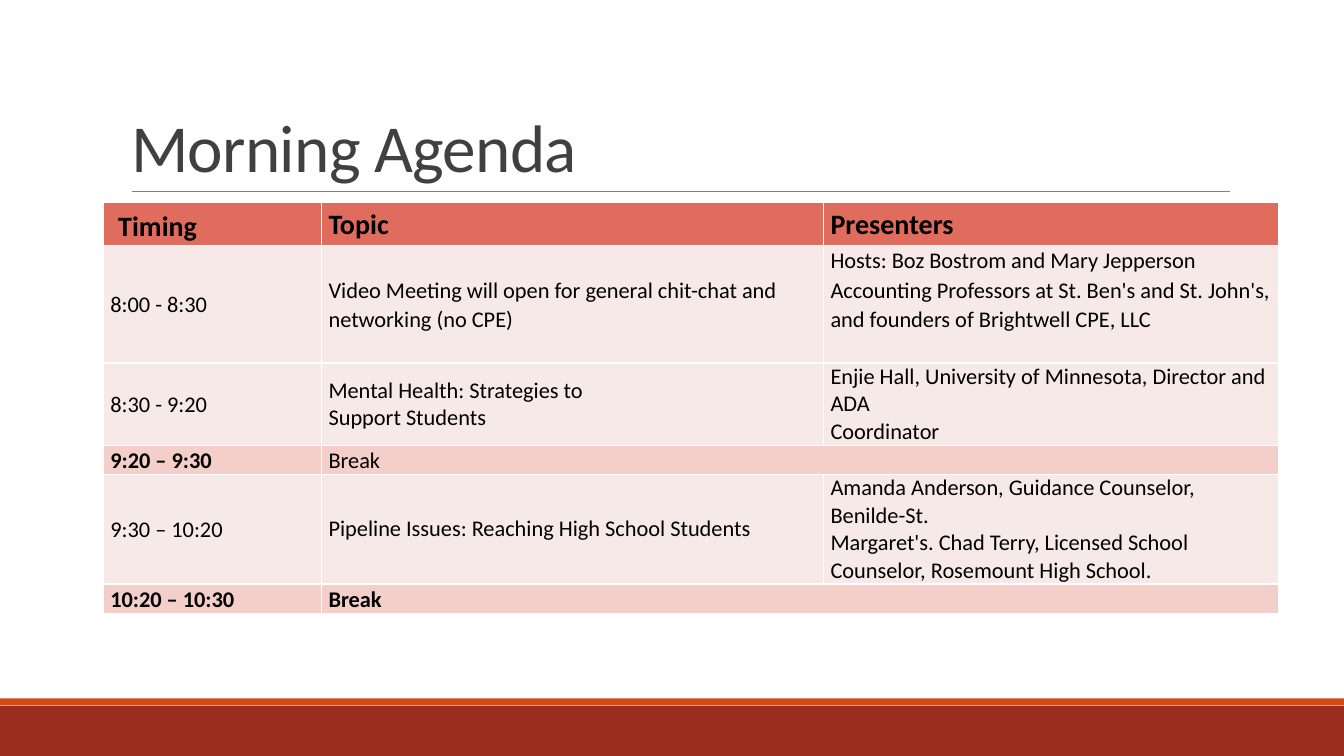
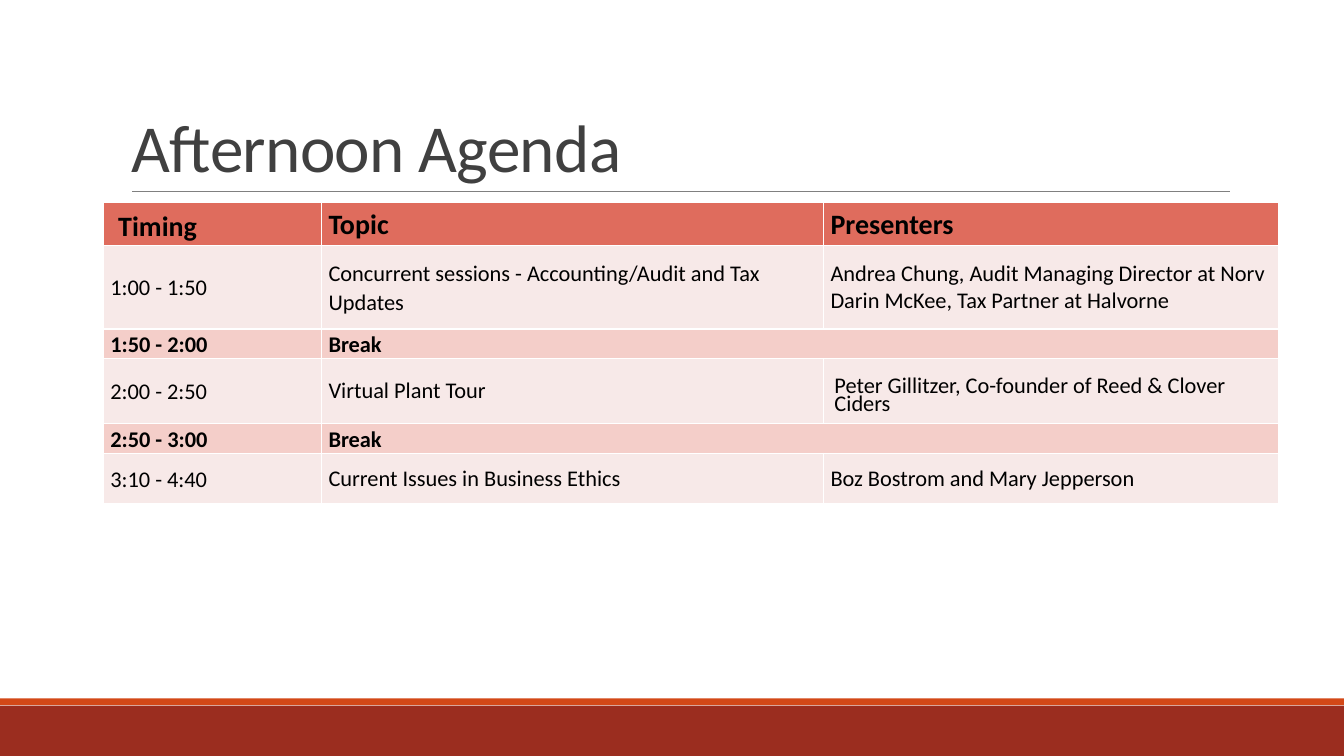
from dataclasses import dataclass

from lxml.etree import SubElement
from pptx import Presentation
from pptx.dml.color import RGBColor
from pptx.enum.shapes import MSO_CONNECTOR as Link, MSO_SHAPE as Shape
from pptx.enum.text import MSO_ANCHOR as Anchor, PP_ALIGN as Align
from pptx.oxml.ns import qn
from pptx.util import Cm, Pt

FONT = "Calibri"
INK, BLACK, WHITE, RULE = "404040", "000000", "FFFFFF", "808080"
BANDS = [(17.78, 1.27, "9B2D1F"), (17.6, 0.17, "D34817")]
HEAD, PLAIN, PAUSE = "DF6C5D", "F7E9E8", "F4CEC9"
WIDE, TALL = 33.87, 19.05
COLS = [5.5, 12.65, 11.47]
LOOSE = 1.07
THIN = 0.74


@dataclass
class Cell:
    text: str
    lead: object = 1.0
    bold: bool = False
    size: int = 16
    left: float = 0.18
    top: float = 0
    base: float = 0


@dataclass
class Row:
    high: float
    cells: list
    fill: str = PLAIN


def slot(high, time, topic, who):
    return Row(high, [Cell(time, LOOSE), topic, who])


def rest(time, bold=True):
    return Row(THIN, [Cell(time, LOOSE, True), Cell("Break", LOOSE, bold)], PAUSE)


def head():
    return Row(1.1, [
        Cell("Timing", LOOSE, True, 20, left=0.38, top=0.1),
        Cell("Topic", LOOSE, True, 20),
        Cell("Presenters", LOOSE, True, 20),
    ], HEAD)


MORNING = [
    slot(2.95, "8:00 - 8:30",
         Cell("Video Meeting will open for general chit-chat and networking (no CPE)", LOOSE),
         Cell("Hosts: Boz Bostrom and Mary Jepperson\n"
              "Accounting Professors at St. Ben's and St. John's, "
              "and founders of Brightwell CPE, LLC", LOOSE, base=0.74)),
    slot(2.07, "8:30 - 9:20",
         Cell("Mental Health: Strategies to\nSupport Students"),
         Cell("Enjie Hall, University of Minnesota, Director and ADA\nCoordinator")),
    rest("9:20 – 9:30", False),
    slot(2.76, "9:30 – 10:20",
         Cell("Pipeline Issues: Reaching High School Students"),
         Cell("Amanda Anderson, Guidance Counselor, Benilde-St.\n"
              "Margaret's. Chad Terry, Licensed School Counselor, Rosemount High School.")),
    rest("10:20 – 10:30"),
]

AFTERNOON = [
    slot(2.1, "1:00 - 1:50",
         Cell("Concurrent sessions - Accounting/Audit and Tax Updates", LOOSE),
         Cell("Andrea Chung, Audit Managing Director at Norv\n"
              "Darin McKee, Tax Partner at Halvorne")),
    rest("1:50 - 2:00"),
    slot(1.65, "2:00 - 2:50",
         Cell("Virtual Plant Tour"),
         Cell("Peter Gillitzer, Co-founder of Reed & Clover Ciders",
              Pt(12.7), left=0.28, top=0.45)),
    rest("2:50 - 3:00"),
    slot(1.27, "3:10 - 4:40",
         Cell("Current Issues in Business Ethics"),
         Cell("Boz Bostrom and Mary Jepperson")),
]


def color(code):
    return RGBColor.from_string(code)


def paint(fill, code):
    fill.solid()
    fill.fore_color.rgb = color(code)


def style(para, size, code, lead, bold=False):
    para.alignment = Align.LEFT
    para.line_spacing = lead
    font = para.font
    font.name, font.size, font.bold = FONT, Pt(size), bold
    font.color.rgb = color(code)


def add_bands(slide):
    for top, high, code in BANDS:
        band = slide.shapes.add_shape(Shape.RECTANGLE, 0, Cm(top), Cm(WIDE), Cm(high))
        band.shadow.inherit = False
        paint(band.fill, code)
        band.line.fill.background()


def add_title(slide, text, left, top, wide, high):
    title = slide.shapes.title
    title.left, title.top = Cm(left), Cm(top)
    title.width, title.height = Cm(wide), Cm(high)
    frame = title.text_frame
    frame.text = text
    frame.vertical_anchor = Anchor.BOTTOM
    para = frame.paragraphs[0]
    style(para, 48, INK, 0.85)
    para.runs[0]._r.get_or_add_rPr().set("spc", "-50")
    base = Cm(top + high)
    rule = slide.shapes.add_connector(
        Link.STRAIGHT, Cm(left + 0.28), base, Cm(left + wide), base)
    rule.line.color.rgb = color(RULE)
    rule.line.width = Pt(0.5)
    SubElement(rule._element.spPr, qn("a:effectLst"))


def edge(cell):
    props = cell._tc.get_or_add_tcPr()
    for side in ("lnL", "lnR", "lnT", "lnB"):
        line = SubElement(props, qn(f"a:{side}"), w=str(Pt(1)))
        fill = SubElement(line, qn("a:solidFill"))
        SubElement(fill, qn("a:srgbClr"), val=WHITE)


def fill_cell(cell, item):
    cell.vertical_anchor = Anchor.MIDDLE
    cell.margin_left, cell.margin_right = Cm(item.left), Cm(0.18)
    cell.margin_top, cell.margin_bottom = Cm(item.top), Cm(item.base)
    cell.text = item.text
    for para in cell.text_frame.paragraphs:
        style(para, item.size, BLACK, item.lead, item.bold)


def add_grid(slide, rows, left, top):
    high = sum(row.high for row in rows)
    grid = slide.shapes.add_table(
        len(rows), len(COLS), Cm(left), Cm(top), Cm(sum(COLS)), Cm(high)).table
    for col, wide in zip(grid.columns, COLS):
        col.width = Cm(wide)
    for i, row in enumerate(rows):
        grid.rows[i].height = Cm(row.high)
        for j in range(len(COLS)):
            cell = grid.cell(i, j)
            edge(cell)
            paint(cell.fill, row.fill)
        for j, item in enumerate(row.cells):
            fill_cell(grid.cell(i, j), item)
        if len(row.cells) < len(COLS):
            grid.cell(i, 1).merge(grid.cell(i, 2))


def add_agenda(deck, title, rows):
    slide = deck.slides.add_slide(deck.slide_layouts[5])
    add_bands(slide)
    add_title(slide, title, 3.05, 0.79, 27.94, 4.04)
    add_grid(slide, [head(), *rows], 2.6, 5.09)


def main():
    deck = Presentation()
    deck.slide_width, deck.slide_height = Cm(WIDE), Cm(TALL)
    add_agenda(deck, "Morning Agenda", MORNING)
    add_agenda(deck, "Afternoon Agenda", AFTERNOON)
    deck.save("out.pptx")


if __name__ == "__main__":
    main()
